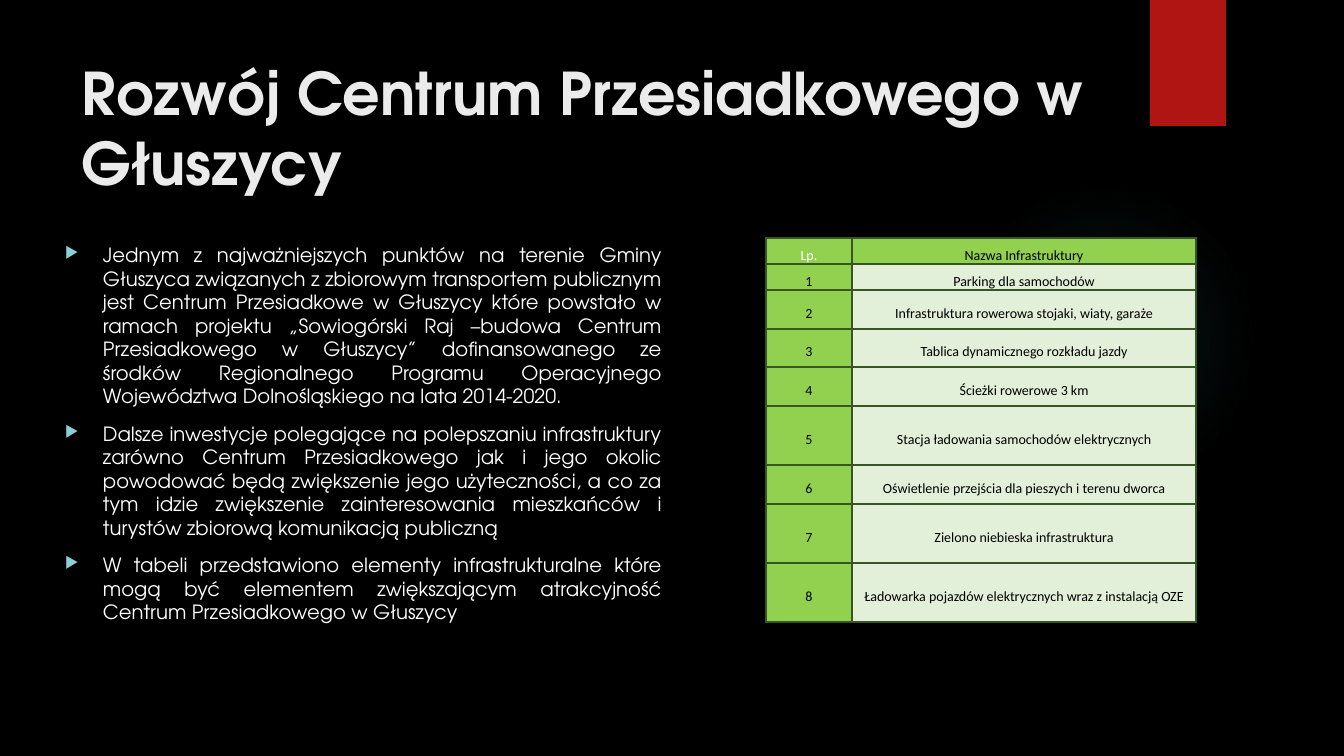
from lxml import etree
from pptx import Presentation
from pptx.dml.color import RGBColor
from pptx.enum.shapes import MSO_SHAPE
from pptx.enum.text import MSO_ANCHOR, PP_ALIGN
from pptx.oxml import parse_xml
from pptx.oxml.ns import nsdecls, qn
from pptx.util import Pt

RECTANGLE, OVAL = MSO_SHAPE.RECTANGLE, MSO_SHAPE.OVAL
TOP, MIDDLE = MSO_ANCHOR.TOP, MSO_ANCHOR.MIDDLE
LEFT, CENTER, JUSTIFY = PP_ALIGN.LEFT, PP_ALIGN.CENTER, PP_ALIGN.JUSTIFY

TITLE = "Rozwój Centrum Przesiadkowego w Głuszycy"
BULLETS = [
    "Jednym z najważniejszych punktów na terenie Gminy Głuszyca związanych z zbiorowym "
    "transportem publicznym jest Centrum Przesiadkowe w Głuszycy które powstało w ramach "
    "projektu „Sowiogórski Raj –budowa Centrum Przesiadkowego w Głuszycy” dofinansowanego "
    "ze środków Regionalnego Programu Operacyjnego Województwa Dolnośląskiego na lata "
    "2014-2020.",
    "Dalsze inwestycje polegające na polepszaniu infrastruktury zarówno Centrum "
    "Przesiadkowego jak i jego okolic powodować będą zwiększenie jego użyteczności, a co za "
    "tym idzie zwiększenie zainteresowania mieszkańców i turystów zbiorową komunikacją "
    "publiczną",
    "W tabeli przedstawiono elementy infrastrukturalne które mogą być elementem "
    "zwiększającym atrakcyjność Centrum Przesiadkowego w Głuszycy",
]
HEADER = ("Lp.", "Nazwa Infrastruktury")
INFRASTRUCTURE = [
    ("Parking dla samochodów", 26),
    ("Infrastruktura rowerowa stojaki, wiaty, garaże", 39),
    ("Tablica dynamicznego rozkładu jazdy", 38),
    ("Ścieżki rowerowe 3 km", 39),
    ("Stacja ładowania samochodów elektrycznych", 59),
    ("Oświetlenie przejścia dla pieszych i terenu dworca", 39),
    ("Zielono niebieska infrastruktura", 59),
    ("Ładowarka pojazdów elektrycznych wraz z instalacją OZE", 59),
]
HEADER_HEIGHT = 26
COLUMN_WIDTHS = (86, 344)
GLOW_STOPS = [(0, 7), (36, 6), (69, 0)]
COLORS = {
    "background": "000000", "glow": "50B9C1", "ribbon": "B01513", "title": "EBEBEB",
    "white": "FFFFFF", "black": "000000", "bullet": "8AD0D6",
    "green": "92D050", "pale": "E2EFD9", "border": "385623",
}
HEADING_FONT, TABLE_FONT = "TeX Gyre Adventor", "Calibri"


def px(value):
    return round(value * 914400 / 100.8)


def color(name):
    return RGBColor.from_string(COLORS[name])


def add_run(paragraph, text, font, size, color_name, bold=False):
    run = paragraph.add_run()
    run.text = text
    run.font.name = font
    run.font.size = Pt(size)
    run.font.bold = bold
    run.font.color.rgb = color(color_name)


def add_plain_shape(slide, kind, *box):
    shape = slide.shapes.add_shape(kind, *map(px, box))
    shape.shadow.inherit = False
    shape.line.fill.background()
    return shape


def add_glow(slide):
    glow = add_plain_shape(slide, OVAL, 949, 184, 310, 310)
    stops = "".join(
        f'<a:gs pos="{position * 1000}"><a:srgbClr val="{COLORS["glow"]}">'
        f'<a:alpha val="{alpha * 1000}"/></a:srgbClr></a:gs>'
        for position, alpha in GLOW_STOPS)
    gradient = parse_xml(
        f'<a:gradFill {nsdecls("a")}><a:gsLst>{stops}</a:gsLst><a:path path="circle">'
        '<a:fillToRect l="50000" t="50000" r="50000" b="50000"/></a:path></a:gradFill>')
    glow._element.spPr.find(qn("a:prstGeom")).addnext(gradient)


def add_ribbon(slide):
    ribbon = add_plain_shape(slide, RECTANGLE, 1150, 0, 76, 126)
    ribbon.fill.solid()
    ribbon.fill.fore_color.rgb = color("ribbon")
    ribbon._element.spPr.find(qn("a:effectLst")).append(parse_xml(
        f'<a:outerShdw {nsdecls("a")} blurRad="{Pt(3)}" dist="{Pt(2)}" dir="5400000">'
        f'<a:srgbClr val="{COLORS["black"]}"><a:alpha val="45000"/></a:srgbClr></a:outerShdw>'))


def add_text_frame(slide, anchor, *box):
    frame = slide.shapes.add_textbox(*map(px, box)).text_frame
    frame.word_wrap = True
    frame.vertical_anchor = anchor
    return frame


def add_bullets(slide):
    frame = add_text_frame(slide, TOP, 55, 238, 617, 427)
    for index, text in enumerate(BULLETS):
        paragraph = frame.add_paragraph() if index else frame.paragraphs[0]
        properties = paragraph._p.get_or_add_pPr()
        properties.set("marL", str(px(38)))
        properties.set("indent", str(px(-38)))
        bullet_color = etree.SubElement(properties, qn("a:buClr"))
        etree.SubElement(bullet_color, qn("a:srgbClr"), val=COLORS["bullet"])
        etree.SubElement(properties, qn("a:buSzPct"), val="80000")
        etree.SubElement(properties, qn("a:buChar"), char="▶")
        paragraph.alignment = JUSTIFY
        paragraph.space_before = Pt(10 if index else 0)
        add_run(paragraph, text, HEADING_FONT, 14, "white")


def fill_cell(cell, text, fill, text_color):
    cell.margin_left = cell.margin_right = px(7)
    cell.margin_top = cell.margin_bottom = 0
    cell.vertical_anchor = MIDDLE
    paragraph = cell.text_frame.paragraphs[0]
    paragraph.alignment = CENTER
    paragraph.line_spacing = 1.5
    add_run(paragraph, text, TABLE_FONT, 10, text_color)
    properties = cell._tc.get_or_add_tcPr()
    for side in ("lnL", "lnR", "lnT", "lnB"):
        properties.append(parse_xml(
            f'<a:{side} {nsdecls("a")} w="{Pt(1.5)}"><a:solidFill>'
            f'<a:srgbClr val="{COLORS["border"]}"/></a:solidFill></a:{side}>'))
    cell.fill.solid()
    cell.fill.fore_color.rgb = color(fill)


def add_infrastructure_table(slide):
    rows = [HEADER] + [(str(number), name)
                       for number, (name, _) in enumerate(INFRASTRUCTURE, 1)]
    heights = [HEADER_HEIGHT] + [height for _, height in INFRASTRUCTURE]
    table = slide.shapes.add_table(
        len(rows), len(COLUMN_WIDTHS), px(766), px(238),
        px(sum(COLUMN_WIDTHS)), px(sum(heights))).table
    for column, width in zip(table.columns, COLUMN_WIDTHS):
        column.width = px(width)
    for row_index, (texts, height) in enumerate(zip(rows, heights)):
        table.rows[row_index].height = px(height)
        for column_index, text in enumerate(texts):
            fill = "pale" if row_index and column_index else "green"
            text_color = "black" if row_index or column_index else "white"
            fill_cell(table.cell(row_index, column_index), text, fill, text_color)


def main():
    presentation = Presentation()
    presentation.slide_width = px(1344)
    presentation.slide_height = px(756)
    slide = presentation.slides.add_slide(presentation.slide_layouts[6])
    slide.background.fill.solid()
    slide.background.fill.fore_color.rgb = color("background")
    add_glow(slide)
    add_ribbon(slide)
    title = add_text_frame(slide, MIDDLE, 72, 50, 1037, 154).paragraphs[0]
    title.alignment = LEFT
    add_run(title, TITLE, HEADING_FONT, 42, "title", bold=True)
    add_bullets(slide)
    add_infrastructure_table(slide)
    presentation.save("out.pptx")


if __name__ == "__main__":
    main()
